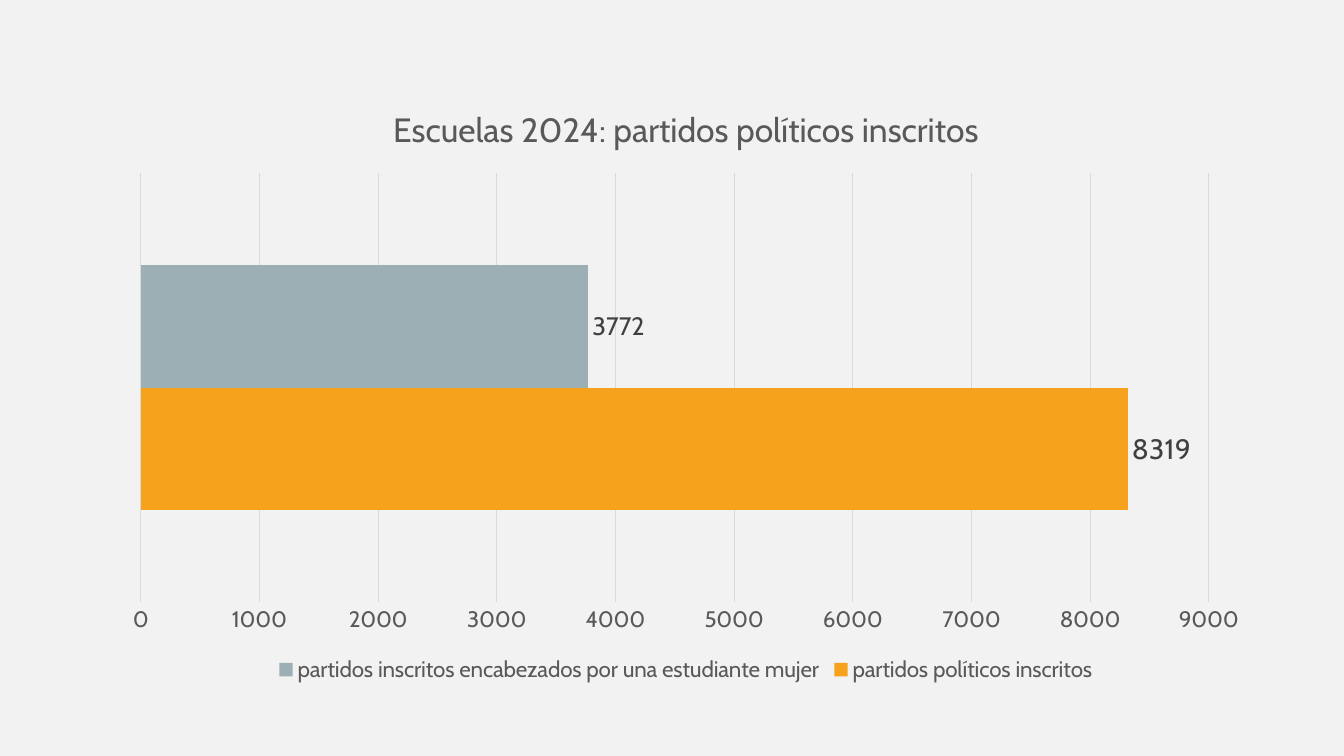
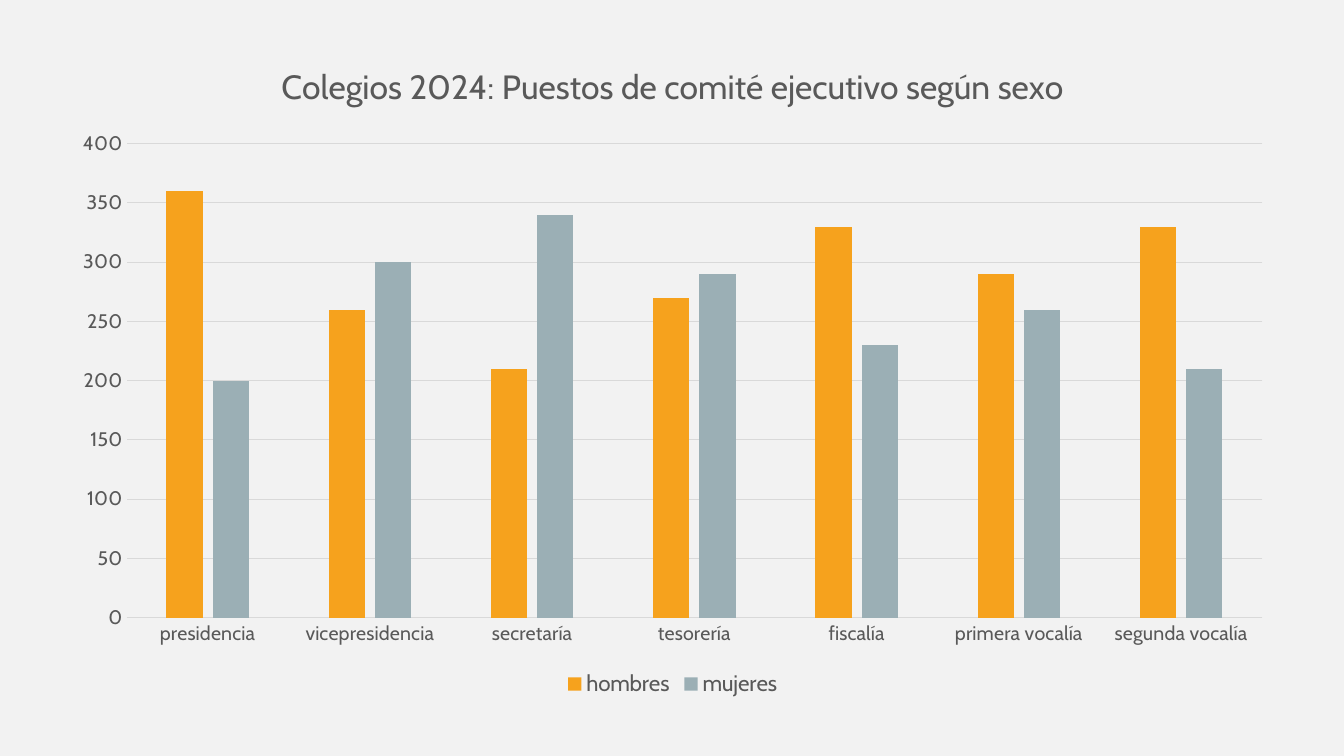
from pptx import Presentation
from pptx.chart.data import CategoryChartData
from pptx.dml.color import RGBColor
from pptx.enum.chart import (XL_CHART_TYPE, XL_LABEL_POSITION,
                             XL_LEGEND_POSITION, XL_TICK_MARK)
from pptx.util import Cm, Pt

BAR = XL_CHART_TYPE.BAR_CLUSTERED
COLUMN = XL_CHART_TYPE.COLUMN_CLUSTERED
OUTSIDE_END = XL_LABEL_POSITION.OUTSIDE_END
BOTTOM = XL_LEGEND_POSITION.BOTTOM
NO_TICK = XL_TICK_MARK.NONE

FONT = "Cabin"
COLORS = {
    "background": "F2F2F2",
    "text": "595959",
    "label": "404040",
    "grid": "D9D9D9",
    "orange": "F6A21D",
    "gray": "9BAFB5",
}

# Content: series are (name, colour, values, data label size or None)
CHARTS = [
    {
        "title": "Escuelas 2024: partidos políticos inscritos",
        "type": BAR,
        "box": (2.77, 2.08, 29.03, 15.24),
        "categories": ["1"],
        "series": [
            ("partidos políticos inscritos", "orange", [8319], 20),
            ("partidos inscritos encabezados por una estudiante mujer",
             "gray", [3772], 18),
        ],
        "gap": 150, "overlap": 0,
        "scale": (9000, 1000),
        "axis_size": 16,
        "show_categories": False,
    },
    {
        "title": "Colegios 2024: Puestos de comité ejecutivo según sexo",
        "type": COLUMN,
        "box": (1.47, 0.97, 30.96, 16.71),
        "categories": ["presidencia", "vicepresidencia", "secretaría",
                       "tesorería", "fiscalía", "primera vocalía",
                       "segunda vocalía"],
        "series": [
            ("hombres", "orange", [360, 260, 210, 270, 330, 290, 330], None),
            ("mujeres", "gray", [200, 300, 340, 290, 230, 260, 210], None),
        ],
        "gap": 219, "overlap": -27,
        "scale": (400, 50),
        "axis_size": 14,
        "show_categories": True,
    },
]


def rgb(name):
    return RGBColor.from_string(COLORS[name])


def style_font(font, size, color="text"):
    font.name = FONT
    font.size = Pt(size)
    font.bold = False
    font.color.rgb = rgb(color)


def style_line(line):
    line.color.rgb = rgb("grid")
    line.width = Pt(0.75)


def style_axes(chart, spec):
    values, categories = chart.value_axis, chart.category_axis
    for axis in (values, categories):
        axis.major_tick_mark = axis.minor_tick_mark = NO_TICK
        style_font(axis.tick_labels.font, spec["axis_size"])
    values.minimum_scale = 0
    values.maximum_scale, values.major_unit = spec["scale"]
    values.format.line.fill.background()
    style_line(values.major_gridlines.format.line)
    categories.visible = spec["show_categories"]
    style_line(categories.format.line)


def add_chart_slide(prs, spec):
    slide = prs.slides.add_slide(prs.slide_layouts.get_by_name("Blank"))

    # Data and frame
    data = CategoryChartData()
    data.categories = spec["categories"]
    for name, _, values, _ in spec["series"]:
        data.add_series(name, values)
    box = [Cm(length) for length in spec["box"]]
    chart = slide.shapes.add_chart(spec["type"], *box, data).chart
    chart.font.name = FONT
    chart.font.size = Pt(10)

    # Title and legend
    chart.has_title = True
    p = chart.chart_title.text_frame.paragraphs[0]
    r = p.add_run()
    r.text = spec["title"]
    style_font(p.font, 24)
    style_font(r.font, 24)
    chart.has_legend = True
    chart.legend.position = BOTTOM
    chart.legend.include_in_layout = False
    style_font(chart.legend.font, 16)

    # Axes and bars
    style_axes(chart, spec)
    plot = chart.plots[0]
    plot.vary_by_categories = False
    plot.gap_width = spec["gap"]
    plot.overlap = spec["overlap"]
    for series, (_, color, _, label_size) in zip(plot.series, spec["series"]):
        series.format.fill.solid()
        series.format.fill.fore_color.rgb = rgb(color)
        series.invert_if_negative = False
        if label_size:
            labels = series.data_labels
            labels.show_value = True
            labels.position = OUTSIDE_END
            style_font(labels.font, label_size, "label")


def main():
    prs = Presentation()
    prs.slide_width, prs.slide_height = Cm(33.87), Cm(19.05)
    fill = prs.slide_master.background.fill
    fill.solid()
    fill.fore_color.rgb = rgb("background")
    for spec in CHARTS:
        add_chart_slide(prs, spec)
    prs.save("out.pptx")


if __name__ == "__main__":
    main()
